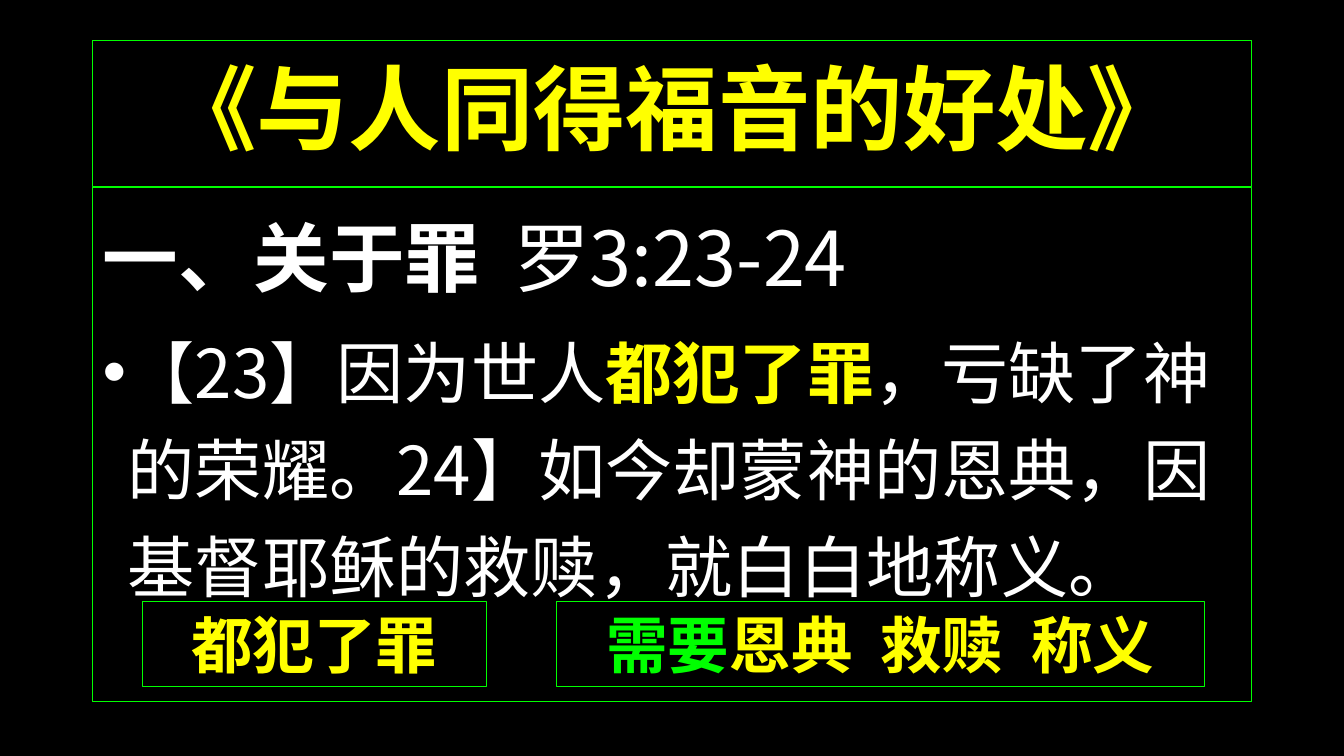
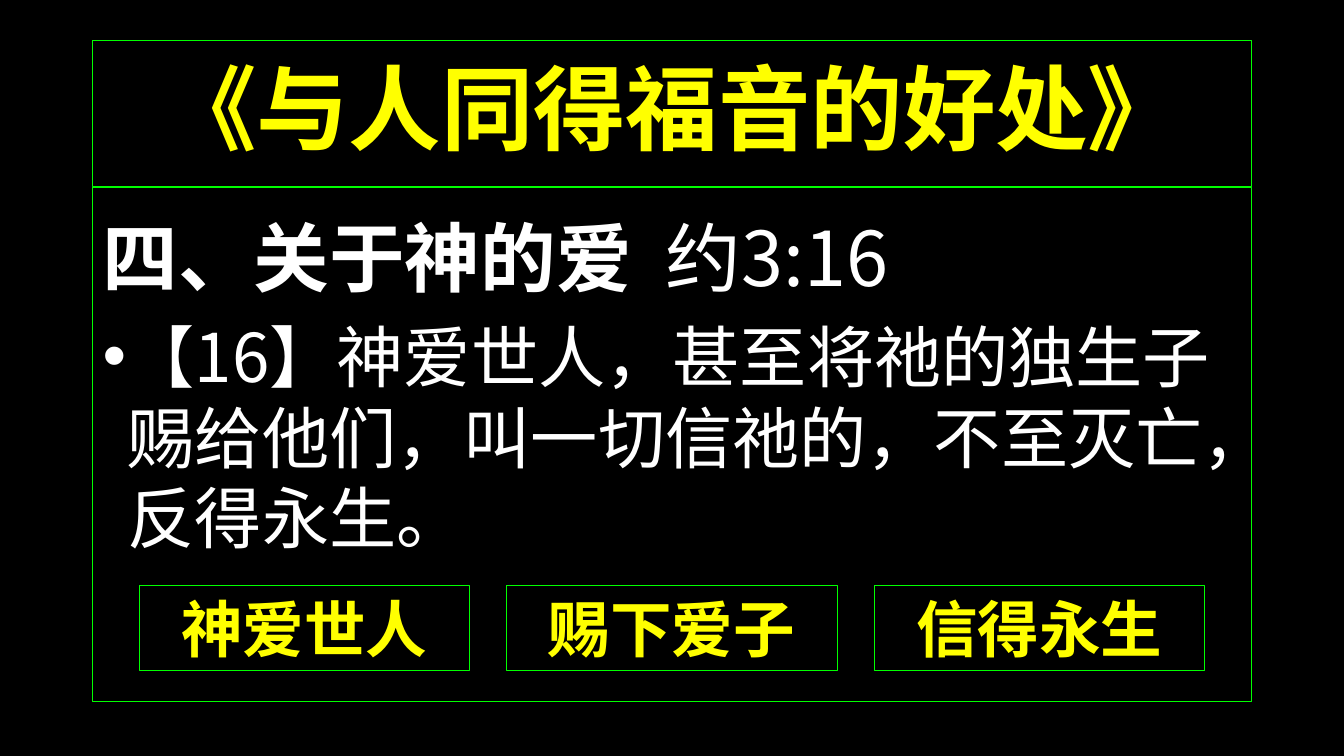
from pptx import Presentation
from pptx.util import Pt
from pptx.dml.color import RGBColor as RGB
from pptx.enum.shapes import MSO_SHAPE as Kind
from pptx.enum.text import PP_ALIGN as Align, MSO_ANCHOR as Anchor, MSO_AUTO_SIZE as Fit
from pptx.oxml.ns import qn
from lxml.etree import SubElement as Sub

FACE = "Noto Sans CJK SC"
BLACK, WHITE, GOLD, LIME = "000000", "FFFFFF", "FFFF00", "00FF00"
HEAD = (66.2, 28.8, 828, 104.4)
BODY = (66.2, 133.9, 828, 367.2)
TITLE = "《与人同得福音的好处》"
GAP = " "


def paint(target, color):
    target.rgb = RGB.from_string(color)


def style(item, values):
    for name, value in values.items():
        setattr(item, name, value)


def frame(slide, box, **values):
    shape = slide.shapes.add_shape(Kind.RECTANGLE, *map(Pt, box))
    shape.shadow.inherit = False
    shape.fill.background()
    paint(shape.line.color, LIME)
    shape.line.width = Pt(0.75)
    text = shape.text_frame
    style(text, {"word_wrap": True, "vertical_anchor": Anchor.TOP, **values})
    return text


def write(para, size, runs, **values):
    style(para, values)
    for words, color, bold in runs:
        run = para.add_run()
        run.text = words
        style(run.font, {"size": Pt(size), "name": FACE, "bold": bold})
        paint(run.font.color, color)
        props = run.font._element
        Sub(props, qn("a:ea"), typeface=FACE)
        if words == GAP:
            props.set("spc", str(round(size * 22)))


def bullet(para):
    props = para._p.get_or_add_pPr()
    style_xml = {"marL": Pt(18), "indent": Pt(-18)}
    for name, value in style_xml.items():
        props.set(name, str(int(value)))
    Sub(props, qn("a:buFont"), typeface="Arial")
    Sub(props, qn("a:buChar"), char="•")


def title(slide, box):
    text = frame(slide, box, vertical_anchor=Anchor.MIDDLE)
    write(text.paragraphs[0], 66, [(TITLE, GOLD, True)],
          alignment=Align.CENTER, line_spacing=0.9)


def verse(slide, box, topic, place, runs, pitch):
    text = frame(slide, box)
    rules = {"alignment": Align.LEFT, "space_before": Pt(10)}
    write(text.paragraphs[0], 54,
          [(topic, WHITE, True), (GAP, WHITE, True), (place, WHITE, False)],
          line_spacing=1.2, **rules)
    para = text.add_paragraph()
    write(para, 48, runs, line_spacing=pitch, **rules)
    bullet(para)


def chips(slide, box, lead, drop, gap, items):
    left, top = box[0] + lead, box[1] + drop
    for width, runs in items:
        text = frame(slide, (left, top, width, 60.6),
                     auto_size=Fit.SHAPE_TO_FIT_TEXT)
        write(text.paragraphs[0], 44, runs, alignment=Align.CENTER)
        left += width + gap


def page(deck, topic, place, runs, pitch, row):
    slide = deck.slides.add_slide(deck.slide_layouts[6])
    fill = slide.background.fill
    fill.solid()
    paint(fill.fore_color, BLACK)
    title(slide, HEAD)
    verse(slide, BODY, topic, place, runs, pitch)
    chips(slide, BODY, *row)


def main():
    deck = Presentation()
    style(deck, {"slide_width": Pt(960), "slide_height": Pt(540)})
    space = (GAP, GOLD, True)
    sin = [("【23】因为世人", WHITE, False), ("都犯了罪", GOLD, True),
           ("，亏缺了神的荣耀。24】如今却蒙神的恩典，因基督耶稣的救赎，就白白地称义。", WHITE, False)]
    need = [("需要", LIME, True), ("恩典", GOLD, True), space,
            ("救赎", GOLD, True), space, ("称义", GOLD, True)]
    page(deck, "一、关于罪", "罗3:23-24", sin, 1.2,
         (35.3, 296, 49.6, [(246.2, [("都犯了罪", GOLD, True)]), (463, need)]))
    love = [("【16】神爱世人，甚至将祂的独生子赐给他们，叫一切信祂的，不至灭亡，反得永生。", WHITE, False)]
    gifts = [(236.2, [(words, GOLD, True)])
             for words in ("神爱世人", "赐下爱子", "信得永生")]
    page(deck, "四、关于神的爱", "约3:16", love, 1.0, (33.2, 284.5, 26.3, gifts))
    deck.save("out.pptx")


if __name__ == "__main__":
    main()
